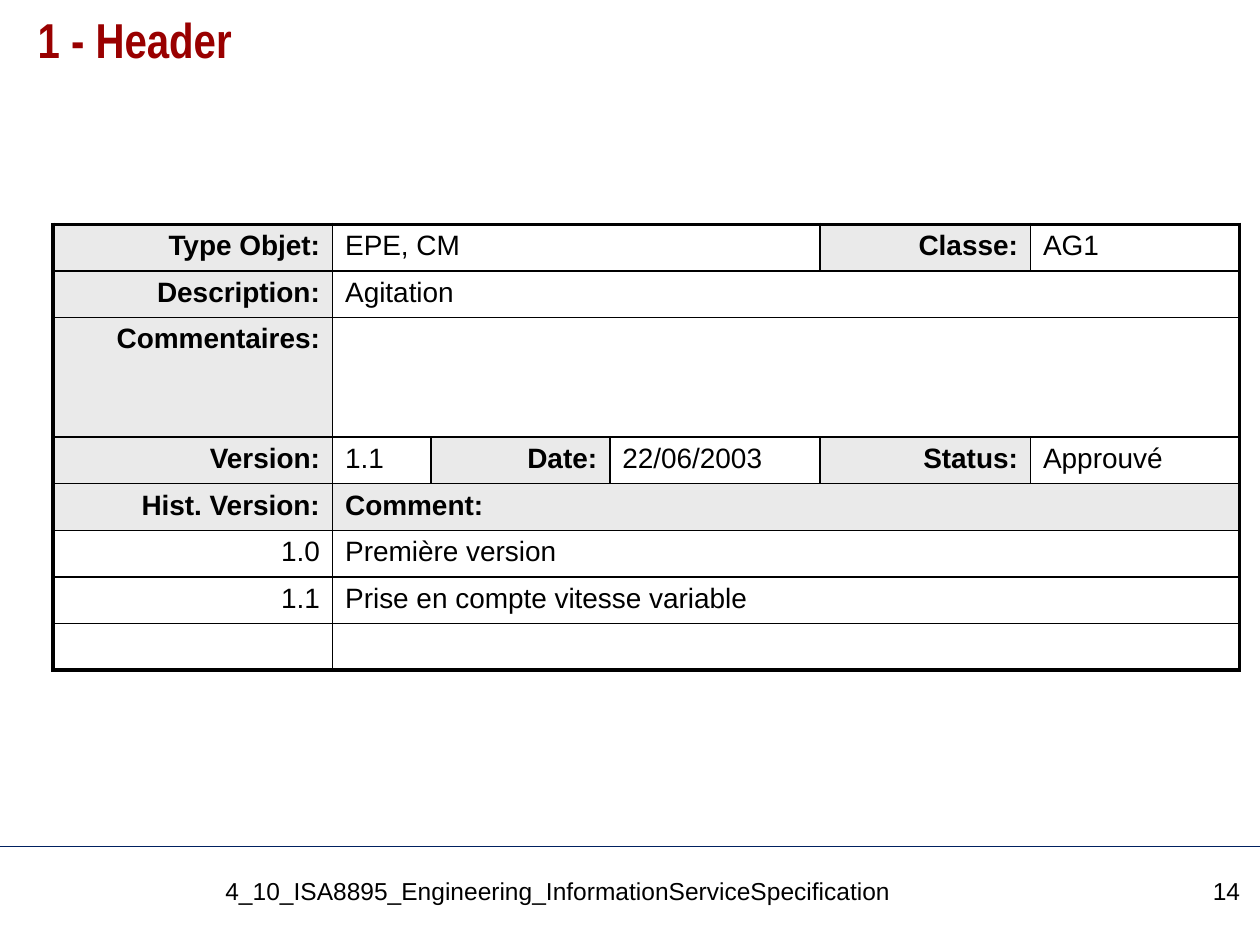
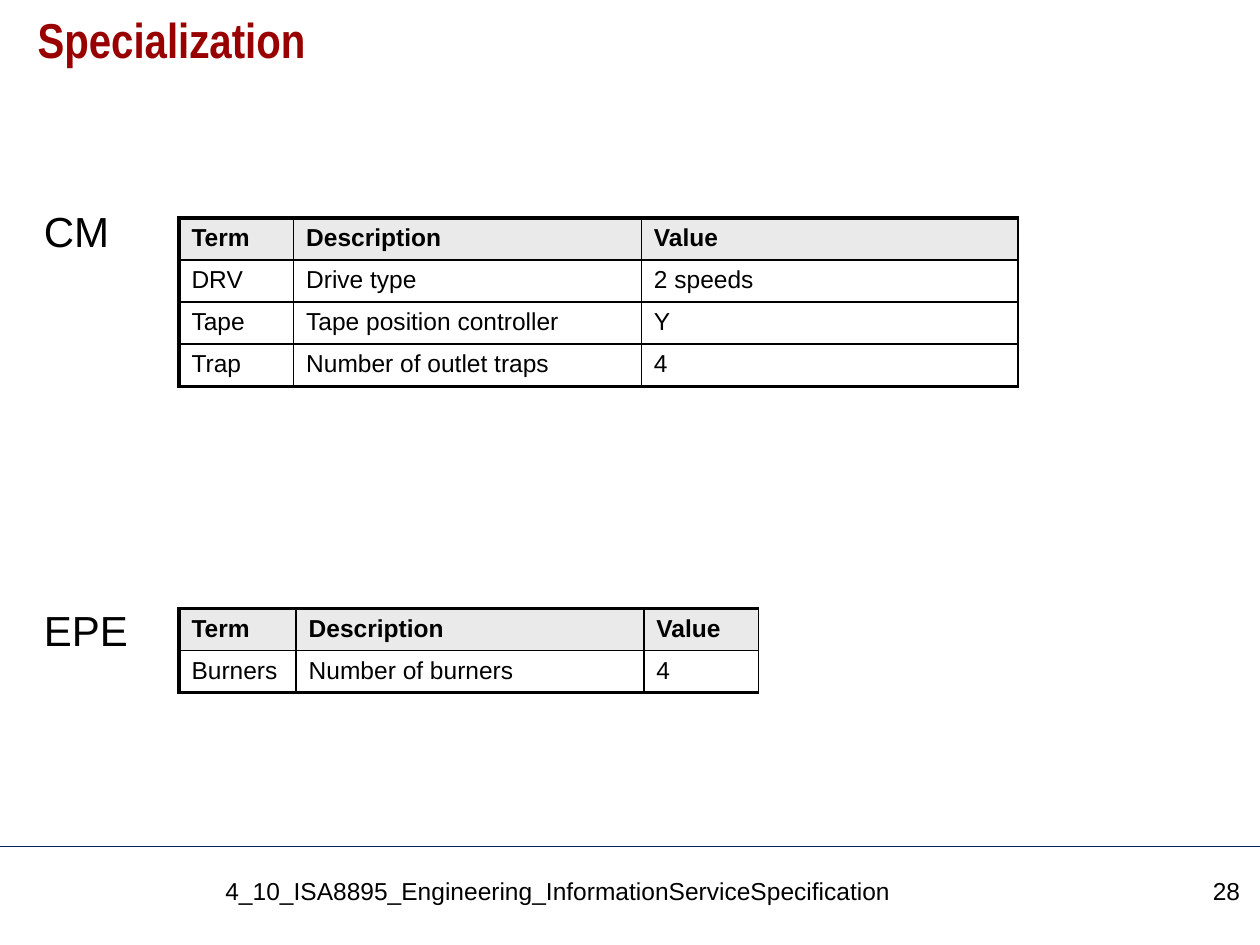
"""Build two slides on object headers and specialization tables."""
from lxml.etree import SubElement
from pptx import Presentation
from pptx.dml.color import RGBColor
from pptx.enum.shapes import MSO_CONNECTOR
from pptx.enum.text import MSO_ANCHOR, PP_ALIGN
from pptx.oxml.ns import qn
from pptx.util import Pt

SCALE = 9144
WIDE, HIGH = 1000, 750
BLACK, RED, NAVY, GRAY, WHITE = "000000", "990000", "002060", "EAEAEA", "FFFFFF"
PLAIN = "{2D5ABB26-0587-4C30-8999-92F81FD0307C}"
THIN, THICK = 1, 2.25
FOOTER = "4_10_ISA8895_Engineering_InformationServiceSpecification"


def px(*sizes):
    """Turn px lengths into EMU."""
    return [size * SCALE for size in sizes]


def color(code):
    """Turn a hex string into a colour."""
    return RGBColor.from_string(code)


def write(frame, text, size=14, font="Arial", ink=BLACK, bold=False,
          right=False, space=None):
    """Put formatted text into a frame."""
    para = frame.paragraphs[0]
    para.alignment = PP_ALIGN.RIGHT if right else PP_ALIGN.LEFT
    para.line_spacing = space
    if not text:
        SubElement(para._p, qn("a:endParaRPr"), sz=str(size * 100))
        return
    run = para.add_run()
    run.text = text
    run.font.size, run.font.name, run.font.bold = Pt(size), font, bold
    run.font.color.rgb = color(ink)


def border(cell, sides):
    """Draw the given sides of a cell, each with its width in points."""
    props = cell._tc.get_or_add_tcPr()
    for side in "LRTB":
        if side in sides:
            line = SubElement(props, qn(f"a:ln{side}"), w=str(Pt(sides[side])))
            fill = SubElement(line, qn("a:solidFill"))
            SubElement(fill, qn("a:srgbClr"), val=BLACK)


class Deck:
    """Hold the style and the current slide."""

    def __init__(self):
        """Start an empty deck."""
        self.show = Presentation()
        self.show.slide_width, self.show.slide_height = px(WIDE, HIGH)

    def page(self, title, number):
        """Add a slide with its title, rule and footer."""
        self.slide = self.show.slides.add_slide(self.show.slide_layouts[6])
        self.rule(672)
        self.text(title, 20, 8, 961, 83, size=28, font="Arial Narrow",
                  ink=RED, bold=True, space=0.9)
        self.text(FOOTER, 169, 690, 721, 45)
        self.text(number, 902, 690, 92, 45, right=True)

    def rule(self, top):
        """Draw a line across the slide."""
        line = self.slide.shapes.add_connector(
            MSO_CONNECTOR.STRAIGHT, *px(0, top, WIDE, top))
        line.line.color.rgb, line.line.width = color(NAVY), Pt(0.75)
        SubElement(line._element.spPr, qn("a:effectLst"))

    def text(self, text, left, top, width, height, **style):
        """Add a text box."""
        box = self.slide.shapes.add_textbox(*px(left, top, width, height))
        frame = box.text_frame
        frame.word_wrap = True
        frame.vertical_anchor = MSO_ANCHOR.TOP
        write(frame, text, **style)

    def table(self, left, top, cols, heights, rows, size=14, head=True, edge=THIN):
        """Add a table in which None extends the cell to its left."""
        count, last = len(cols), len(rows) - 1
        shape = self.slide.shapes.add_table(
            len(rows), count, *px(left, top, sum(cols), sum(heights)))
        grid = shape.table
        grid.first_row = grid.horz_banding = False
        grid._tbl.tblPr.find(qn("a:tableStyleId")).text = PLAIN
        for col, width in zip(grid.columns, px(*cols)):
            col.width = width
        for row, height in zip(grid.rows, px(*heights)):
            row.height = height
        for r, row in enumerate(rows):
            for c, text in enumerate(row):
                cell = grid.cell(r, c)
                end = c + 1
                while end < count and row[end] is None:
                    end += 1
                sides = {"T": THIN if r else THICK,
                         "B": THICK if r == last else THIN}
                if text is not None:
                    sides["L"] = THIN if c else THICK
                if text is not None or end == count:
                    sides["R"] = edge if end == count else THIN
                border(cell, sides)
                label = bool(text) and (text.endswith(":") or head and r == 0)
                cell.fill.solid()
                cell.fill.fore_color.rgb = color(GRAY if label else WHITE)
                single = end == c + 1
                right = not head and single and (c == 0 or label)
                write(cell.text_frame, text, size=size, bold=label, right=right)
                if text is not None and not single:
                    cell.merge(grid.cell(r, end - 1))


def main():
    """Build and save the deck."""
    deck = Deck()

    deck.page("1 - Header", "14")
    rest = [None] * 4
    rows = [
        ["Type Objet:", "EPE, CM", None, None, "Classe:", "AG1"],
        ["Description:", "Agitation", *rest],
        ["Commentaires:", "", *rest],
        ["Version:", "1.1", "Date:", "22/06/2003", "Status:", "Approuvé"],
        ["Hist. Version:", "Comment:", *rest],
        ["1.0", "Première version", *rest],
        ["1.1", "Prise en compte vitesse variable", *rest],
        ["", "", *rest],
    ]
    heights = [95 if row[0] == "Commentaires:" else 37 for row in rows]
    deck.table(42, 178, [222, 78, 142, 167, 167, 166], heights, rows,
               size=16, head=False, edge=THICK)

    deck.page("Specialization", "28")
    names = ["Term", "Description", "Value"]
    drives = [
        names,
        ["DRV", "Drive type", "2 speeds"],
        ["Tape", "Tape position controller", "Y"],
        ["Trap", "Number of outlet traps", "4"],
    ]
    burners = [names, ["Burners", "Number of burners", "4"]]
    deck.table(142, 173, [91, 276, 299], [33] * len(drives), drives)
    deck.table(142, 483, [93, 276, 91], [33] * len(burners), burners)
    for name, top in (("CM", 158), ("EPE", 475)):
        deck.text(name, 25, top, 100, 50, size=24)

    deck.show.save("out.pptx")


if __name__ == "__main__":
    main()
